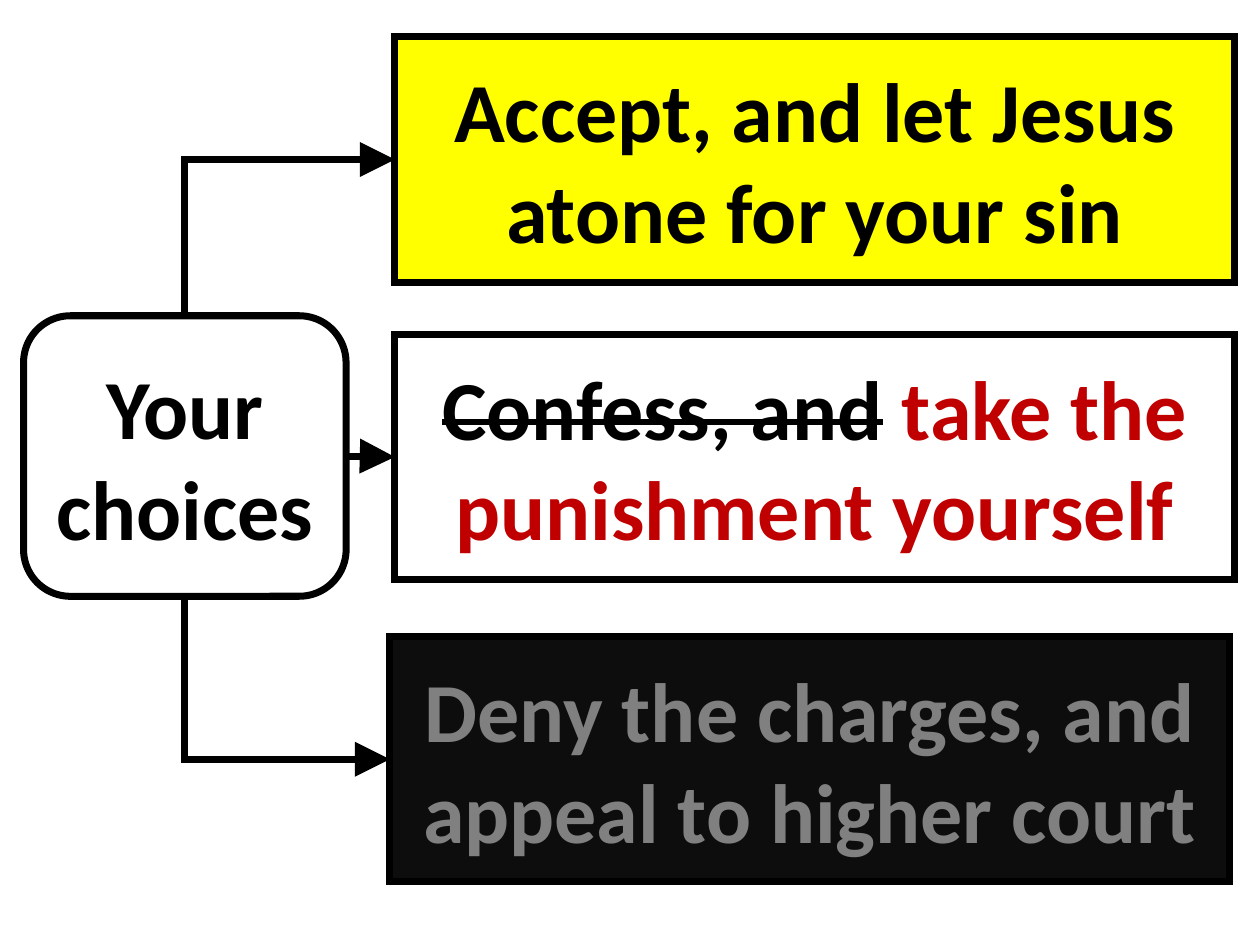
"""Builds a slide with one question leading to three choices."""
import pptx
import pptx.util
import pptx.dml.color
import pptx.enum.shapes
import pptx.enum.text
import pptx.oxml
import pptx.oxml.ns

Inches = pptx.util.Inches
Pt = pptx.util.Pt
SHAPES = pptx.enum.shapes.MSO_SHAPE
TOP, LEFT, BOTTOM, RIGHT = range(4)

COLORS = {
    "ink": "000000",
    "accept": "FFFF00",
    "punish": "C00000",
    "deny": "0D0D0D",
    "muted": "808080",
}

SLIDE_WIDTH = Inches(7.5)
SLIDE_HEIGHT = SLIDE_WIDTH * 3 // 4
QUESTION = {"at": (0.14, 1.88, 1.92, 1.67), "runs": [("Your choices", {})]}
ANSWER_SIZE = (5, 1.46)
ANSWERS = [
    {"at": (2.35, 0.22), "fill": "accept", "leaves": TOP,
     "runs": [("Accept, and let Jesus atone for your sin", {})]},
    {"at": (2.35, 1.99), "fill": None, "leaves": RIGHT,
     "runs": [("Confess, and", {"strike": True}), (" ", {}),
              ("take the punishment yourself", {"color": "punish"})]},
    {"at": (2.32, 3.79), "fill": "deny", "leaves": BOTTOM,
     "runs": [("Deny the charges, and appeal to higher court", {"color": "muted"})]},
]


def rgb(color):
    return pptx.dml.color.RGBColor.from_string(COLORS[color])


def append_xml(parent, tag, attributes=""):
    namespace = pptx.oxml.ns.nsdecls("a")
    parent.append(pptx.oxml.parse_xml(f"<a:{tag} {namespace} {attributes}/>"))


def add_text(paragraph, text, color="ink", size=36, bold=True, strike=False):
    run = paragraph.add_run()
    run.text = text
    run.font.name = "Calibri"
    run.font.size = Pt(size)
    run.font.bold = bold
    run.font.color.rgb = rgb(color)
    if strike:
        run.font._element.set("strike", "sngStrike")


def draw_outline(shape):
    shape.line.color.rgb = rgb("ink")
    shape.line.width = Pt(3)
    outline = shape.element.spPr.find(pptx.oxml.ns.qn("a:ln"))
    append_xml(outline, "miter", 'lim="800000"')
    return outline


def add_box(slide, kind, at, runs, fill=None):
    box = slide.shapes.add_shape(kind, *map(Inches, at))
    box.shadow.inherit = False
    if fill:
        box.fill.solid()
        box.fill.fore_color.rgb = rgb(fill)
    else:
        box.fill.background()
    draw_outline(box)
    frame = box.text_frame
    frame.word_wrap = True
    frame.vertical_anchor = pptx.enum.text.MSO_ANCHOR.MIDDLE
    paragraph = frame.paragraphs[0]
    paragraph.alignment = pptx.enum.text.PP_ALIGN.CENTER
    for text, style in runs:
        add_text(paragraph, text, **style)
    return box


def make_single_bend(arrow):
    dx, dy = arrow.end_x - arrow.begin_x, arrow.end_y - arrow.begin_y
    center_x = (arrow.begin_x + arrow.end_x) // 2
    center_y = (arrow.begin_y + arrow.end_y) // 2
    upward = dy < 0
    arrow.width, arrow.height = abs(dy), abs(dx)
    arrow.left = center_x - abs(dy) // 2
    arrow.top = center_y - abs(dx) // 2
    arrow.rotation = 90 if upward else 270
    properties = arrow.element.spPr
    frame = properties.find(pptx.oxml.ns.qn("a:xfrm"))
    frame.set("flipH", "1")
    frame.set("flipV", "1" if upward else "0")
    properties.find(pptx.oxml.ns.qn("a:prstGeom")).set("prst", "bentConnector2")


def add_arrow(slide, question, answer, leaves):
    arrow = slide.shapes.add_connector(
        pptx.enum.shapes.MSO_CONNECTOR.ELBOW, 0, 0, 0, 0)
    arrow.begin_connect(question, leaves)
    arrow.end_connect(answer, LEFT)
    if leaves != RIGHT:
        make_single_bend(arrow)
    append_xml(draw_outline(arrow), "tailEnd", 'type="triangle" w="lg" len="lg"')
    append_xml(arrow.element.spPr, "effectLst")


def main():
    deck = pptx.Presentation()
    deck.slide_width, deck.slide_height = SLIDE_WIDTH, SLIDE_HEIGHT
    slide = deck.slides.add_slide(deck.slide_layouts[6])
    question = add_box(slide, SHAPES.ROUNDED_RECTANGLE, **QUESTION)
    answers = [
        add_box(slide, SHAPES.RECTANGLE, answer["at"] + ANSWER_SIZE,
                answer["runs"], answer["fill"])
        for answer in ANSWERS
    ]
    for box, answer in zip(answers, ANSWERS):
        add_arrow(slide, question, box, answer["leaves"])
    deck.save("out.pptx")


if __name__ == "__main__":
    main()
